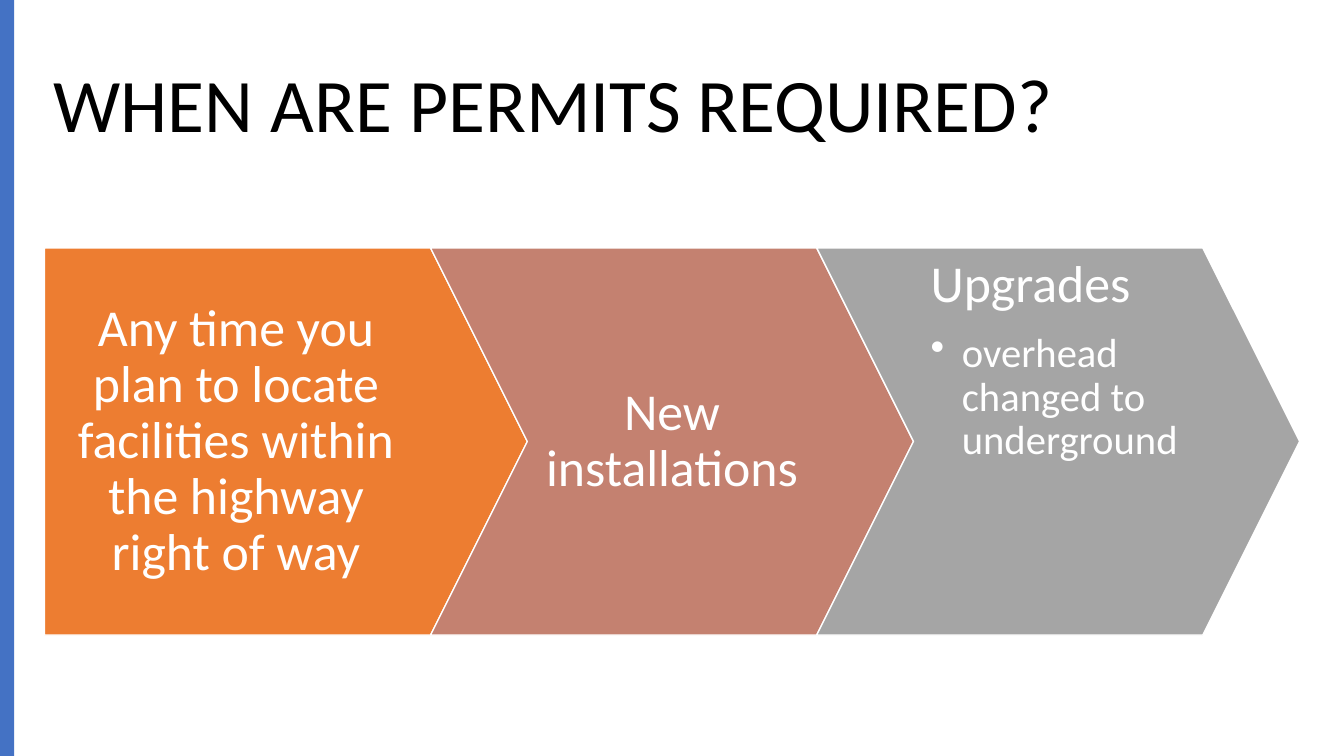
"""Build the slide on when permits are required."""
from dataclasses import dataclass

from lxml import etree
from pptx import Presentation, util as u
from pptx.dml.color import RGBColor
from pptx.enum import shapes, text
from pptx.oxml.ns import qn

TITLE = "WHEN ARE PERMITS REQUIRED?"
STEPS = [
    {"heading": "Any time you plan to locate facilities within the highway right of way",
     "details": [], "fill": "ED7D31"},
    {"heading": "New installations", "details": [], "fill": "C48170"},
    {"heading": "Upgrades", "details": ["overhead changed to underground"], "fill": "A5A5A5"},
]


@dataclass(frozen=True)
class Theme:
    font: str = "Calibri"
    ink: str = "000000"
    light: str = "FFFFFF"
    accent: str = "4472C4"
    title_size: int = 54
    heading_size: int = 37
    detail_size: int = 29


THEME = Theme()
PX = 9144
SLIDE = (1333, 750)
TITLE_BOX = (43, 35, 1248, 145)
STRIPE_BOX = (0, 0, 14, 750)
STEP_LEFT, STEP_TOP, STEP_WIDTH, STEP_HEIGHT = 44, 246, 479, 384
POINT_RATIO = 0.25
STEP_PITCH = STEP_WIDTH - round(STEP_HEIGHT * POINT_RATIO)
INSET_X, INSET_Y, FIRST_INSET_RIGHT = 17, 10, 68
BULLET_INDENT = 31


def px(value):
    return u.Emu(value * PX)


def set_all(target, values):
    for name, value in values.items():
        setattr(target, name, value)


def write(paragraph, words, size, color, align, space_after=0):
    set_all(paragraph, {"text": words, "alignment": align, "line_spacing": 0.9,
                        "space_before": u.Pt(0), "space_after": u.Pt(space_after)})
    font = paragraph.runs[0].font
    set_all(font, {"name": THEME.font, "size": u.Pt(size)})
    font.color.rgb = RGBColor.from_string(color)


def add_bullet(paragraph):
    paragraph.level = 1
    properties = paragraph._p.get_or_add_pPr()
    properties.set("marL", str(px(BULLET_INDENT)))
    properties.set("indent", str(px(-BULLET_INDENT)))
    etree.SubElement(properties, qn("a:buChar")).set("char", "•")


def add_filled(slide, kind, box, fill):
    shape = slide.shapes.add_shape(kind, *map(px, box))
    shape.shadow.inherit = False
    shape.fill.solid()
    shape.fill.fore_color.rgb = RGBColor.from_string(fill)
    shape.line.fill.background()
    return shape


def add_step(slide, index, step):
    kind = shapes.MSO_SHAPE.CHEVRON if index else shapes.MSO_SHAPE.PENTAGON
    box = (STEP_LEFT + index * STEP_PITCH, STEP_TOP, STEP_WIDTH, STEP_HEIGHT)
    shape = add_filled(slide, kind, box, step["fill"])
    shape.adjustments[0] = POINT_RATIO
    shape.line.color.rgb = RGBColor.from_string(THEME.light)
    shape.line.width = u.Pt(1)
    details = step["details"]
    frame = shape.text_frame
    set_all(frame, {
        "word_wrap": True,
        "vertical_anchor": text.MSO_ANCHOR.TOP if details else text.MSO_ANCHOR.MIDDLE,
        "margin_left": px(INSET_X),
        "margin_right": px(INSET_X if index else FIRST_INSET_RIGHT),
        "margin_top": px(INSET_Y),
        "margin_bottom": px(INSET_Y),
    })
    align = text.PP_ALIGN.LEFT if details else text.PP_ALIGN.CENTER
    write(frame.paragraphs[0], step["heading"], THEME.heading_size, THEME.light, align,
          13 if details else 0)
    for detail in details:
        paragraph = frame.add_paragraph()
        write(paragraph, detail, THEME.detail_size, THEME.light, align)
        add_bullet(paragraph)


def main():
    presentation = Presentation()
    set_all(presentation, dict(zip(("slide_width", "slide_height"), map(px, SLIDE))))
    slide = presentation.slides.add_slide(presentation.slide_layouts[5])
    title = slide.shapes.title
    set_all(title, dict(zip(("left", "top", "width", "height"), map(px, TITLE_BOX))))
    set_all(title.text_frame, {"word_wrap": True, "vertical_anchor": text.MSO_ANCHOR.MIDDLE})
    write(title.text_frame.paragraphs[0], TITLE, THEME.title_size, THEME.ink, text.PP_ALIGN.LEFT)
    add_filled(slide, shapes.MSO_SHAPE.RECTANGLE, STRIPE_BOX, THEME.accent)
    for index, step in enumerate(STEPS):
        add_step(slide, index, step)
    presentation.save("out.pptx")


if __name__ == "__main__":
    main()
